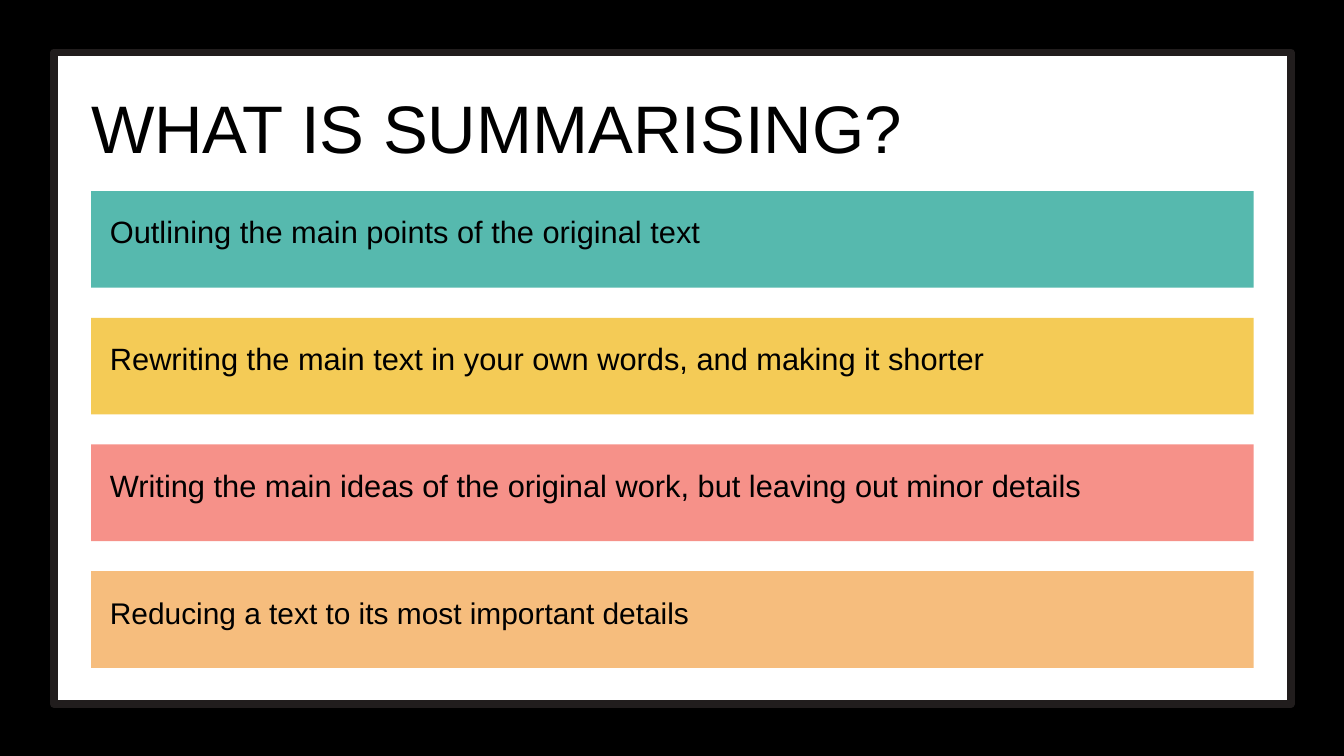
from pptx import Presentation
from pptx import util as u
from pptx.dml.color import RGBColor
from pptx.enum import shapes, text

PX = 9525  # EMU per px, 96 px to the inch
LEFT, WIDTH = 130, 1661
BAR_TOP, BAR_HEIGHT, BAR_PITCH = 273, 138, 181
LINE_SPACING = 1.4

# wording, fill, text size in points, height of the text box
POINTS = [
    ("Outlining the main points of the original text", "56B9AE", 33, 169),
    ("Rewriting the main text in your own words, and making it shorter",
     "F4CB56", 33, 169),
    ("Writing the main ideas of the original work, but leaving out minor details",
     "F69189", 33, 169),
    ("Reducing a text to its most important details", "F6BD7D", 32, 165),
]


def rgb(value):
    return RGBColor.from_string(value)


def px(*lengths):
    return [u.Emu(n * PX) for n in lengths]


def add_box(slide, box, fill, line=None, line_width=0):
    sp = slide.shapes.add_shape(shapes.MSO_SHAPE.RECTANGLE, *px(*box))
    sp.shadow.inherit = False
    sp.fill.solid()
    sp.fill.fore_color.rgb = rgb(fill)
    if line:
        sp.line.color.rgb = rgb(line)
        sp.line.width = u.Pt(line_width)
    else:
        sp.line.fill.background()


def add_text(slide, box, wording, size, inset=0, anchor=text.MSO_ANCHOR.TOP):
    tf = slide.shapes.add_textbox(*px(*box)).text_frame
    margin = u.Emu(inset * PX)
    frame_format = {
        "word_wrap": True, "vertical_anchor": anchor,
        "margin_left": margin, "margin_right": margin,
        "margin_top": margin, "margin_bottom": margin,
    }
    for name, value in frame_format.items():
        setattr(tf, name, value)
    p = tf.paragraphs[0]
    p.line_spacing = u.Pt(size * LINE_SPACING)
    r = p.add_run()
    r.text = wording
    for name, value in {"name": "Arial", "size": u.Pt(size)}.items():
        setattr(r.font, name, value)
    r.font.color.rgb = rgb("000000")


def add_point(slide, row, wording, fill, size, text_height):
    """Draw one coloured bar; its text box shares the bar's bottom edge."""
    top = BAR_TOP + row * BAR_PITCH
    text_top = top + BAR_HEIGHT - text_height
    add_box(slide, (LEFT, top, WIDTH, BAR_HEIGHT), fill)
    add_text(slide, (LEFT, text_top, WIDTH, text_height), wording, size,
             inset=27, anchor=text.MSO_ANCHOR.MIDDLE)


def main():
    prs = Presentation()
    prs.slide_width, prs.slide_height = px(1920, 1080)
    slide = prs.slides.add_slide(prs.slide_layouts[6])
    slide.background.fill.solid()
    slide.background.fill.fore_color.rgb = rgb("000000")

    add_box(slide, (77, 75, 1767, 931), "FFFFFF", "211D1D", 8.25)
    for row, point in enumerate(POINTS):
        add_point(slide, row, *point)
    add_text(slide, (LEFT, 104, WIDTH, 127), "WHAT IS SUMMARISING?", 72)
    prs.save("out.pptx")


if __name__ == "__main__":
    main()
